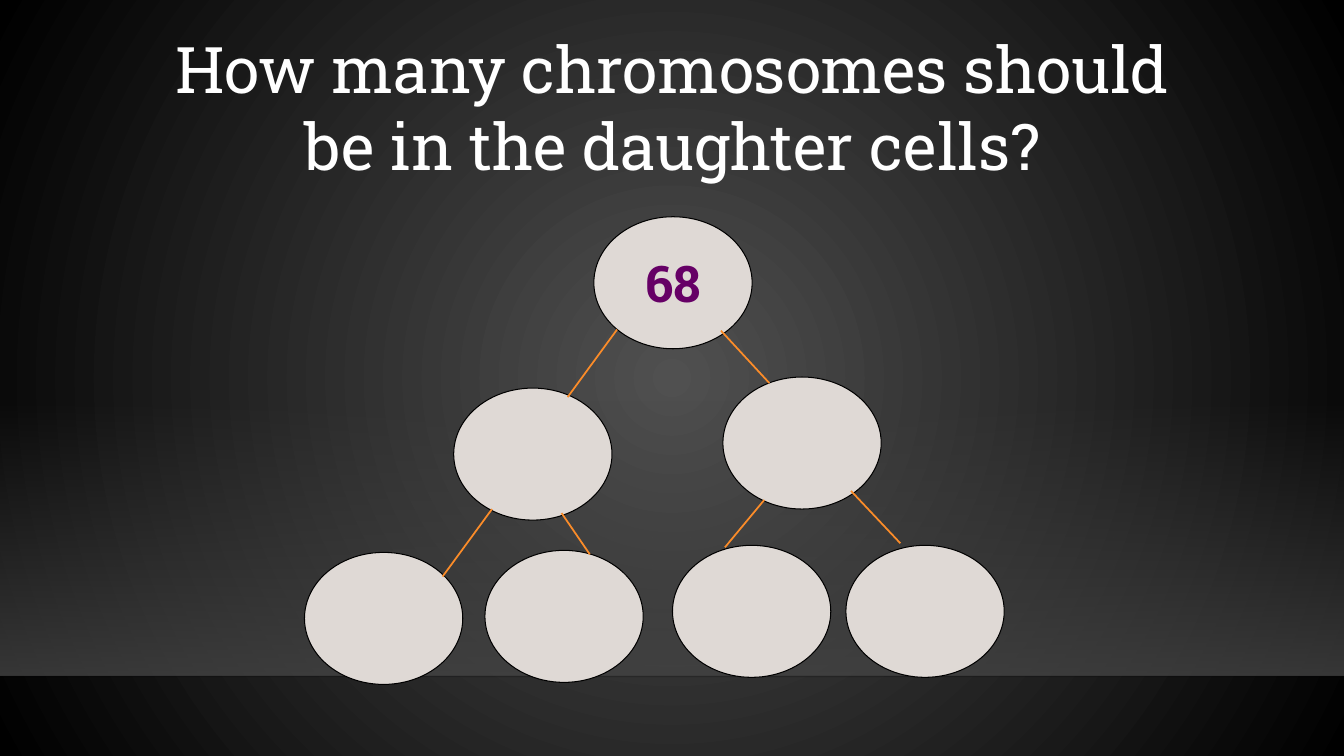
from lxml import etree
from pptx import Presentation
from pptx import util as u
from pptx.dml.color import RGBColor
from pptx.enum import shapes, text
from pptx.oxml import ns

FONT = "Roboto Slab"
CELL_SIZE = (1.57, 1.31)
PARENT_CELL = (5.89, 2.15)
DAUGHTER_CELLS = [(7.17, 3.74), (4.5, 3.85), (4.81, 5.46), (3.02, 5.48), (6.67, 5.41), (8.39, 5.41)]
BRANCHES = [
    ((6.12, 3.27), (5.63, 3.94)),
    ((7.15, 3.28), (7.63, 3.8)),
    ((7.58, 4.96), (7.19, 5.43)),
    ((4.88, 5.05), (4.39, 5.72)),
    ((5.57, 5.09), (5.85, 5.5)),
    ((8.44, 4.87), (8.93, 5.39)),
]


def color(value):
    return RGBColor.from_string(value)


def inches(*values):
    return [u.Inches(value) for value in values]


def add_child(parent, tag, **attributes):
    return etree.SubElement(parent, ns.qn(tag), {key: str(value) for key, value in attributes.items()})


def set_opacity(color_element, percent):
    add_child(color_element, "a:alpha", val=percent * 1000)


def set_gradient(fill, properties, stops, radial=False):
    fill.gradient()
    gradient = properties.find(ns.qn("a:gradFill"))
    for child in list(gradient):
        gradient.remove(child)
    stop_list = add_child(gradient, "a:gsLst")
    for position, value, opacity in stops:
        stop = add_child(stop_list, "a:gs", pos=position * 1000)
        set_opacity(add_child(stop, "a:srgbClr", val=value), opacity)
    if radial:
        circle = add_child(gradient, "a:path", path="circle")
        add_child(circle, "a:fillToRect", l=50000, t=50000, r=50000, b=50000)
    else:
        add_child(gradient, "a:lin", ang=90 * 60000, scaled=0)


def add_run(paragraph, wording, size, value, bold=False):
    run = paragraph.add_run()
    run.text = wording
    run.font.name = FONT
    run.font.size = u.Pt(size)
    run.font.bold = bold
    run.font.color.rgb = color(value)


def add_line(slide, start, end, value, width):
    line = slide.shapes.add_connector(shapes.MSO_CONNECTOR.STRAIGHT, *inches(*start, *end))
    line.line.color.rgb = color(value)
    line.line.width = u.Pt(width)
    add_child(line._element.spPr, "a:effectLst")
    return line


def add_backdrop(slide):
    fill = slide.background.fill
    background = slide._element.cSld.find(ns.qn("p:bg"))
    set_gradient(fill, background.find(ns.qn("p:bgPr")),
                 [(0, "505050", 100), (100, "000000", 100)], radial=True)
    glow = slide.shapes.add_shape(shapes.MSO_SHAPE.RECTANGLE, *inches(0, 3.96, 13.33, 2.74))
    glow.shadow.inherit = False
    glow.line.fill.background()
    set_gradient(glow.fill, glow._element.spPr, [(0, "454545", 0), (100, "454545", 80)])
    floor = add_line(slide, (0, 6.71), (13.33, 6.71), "000001", 1)
    set_opacity(next(floor._element.spPr.iter(ns.qn("a:srgbClr"))), 20)


def set_title(slide, wording):
    title = slide.shapes.title
    title.left, title.top, title.width, title.height = inches(1.59, 0.2, 10.16, 2.02)
    frame = title.text_frame
    frame.word_wrap = True
    frame.auto_size = text.MSO_AUTO_SIZE.NONE
    frame.vertical_anchor = text.MSO_ANCHOR.TOP
    frame.margin_top = u.Inches(0.09)
    paragraph = frame.paragraphs[0]
    paragraph.alignment = text.PP_ALIGN.CENTER
    paragraph.line_spacing = 1.0
    paragraph.space_before = u.Pt(0)
    add_run(paragraph, wording, 45.9, "FFFFFF")


def add_cell(slide, position, count=None):
    cell = slide.shapes.add_shape(shapes.MSO_SHAPE.OVAL, *inches(*position, *CELL_SIZE))
    cell.shadow.inherit = False
    cell.fill.solid()
    cell.fill.fore_color.rgb = color("DFD9D5")
    cell.line.color.rgb = color("000000")
    cell.line.width = u.Pt(0.75)
    if count:
        cell.text_frame.vertical_anchor = text.MSO_ANCHOR.MIDDLE
        paragraph = cell.text_frame.paragraphs[0]
        paragraph.alignment = text.PP_ALIGN.CENTER
        add_run(paragraph, count, 36, "660066", bold=True)


def main():
    presentation = Presentation()
    presentation.slide_width, presentation.slide_height = inches(13.33, 7.5)
    slide = presentation.slides.add_slide(presentation.slide_layouts.get_by_name("Title Only"))
    add_backdrop(slide)
    set_title(slide, "How many chromosomes should be in the daughter cells?")
    add_cell(slide, PARENT_CELL, "68")
    for position in DAUGHTER_CELLS:
        add_cell(slide, position)
    for start, end in BRANCHES:
        add_line(slide, start, end, "FB8C29", 1.25)
    presentation.save("out.pptx")


if __name__ == "__main__":
    main()
